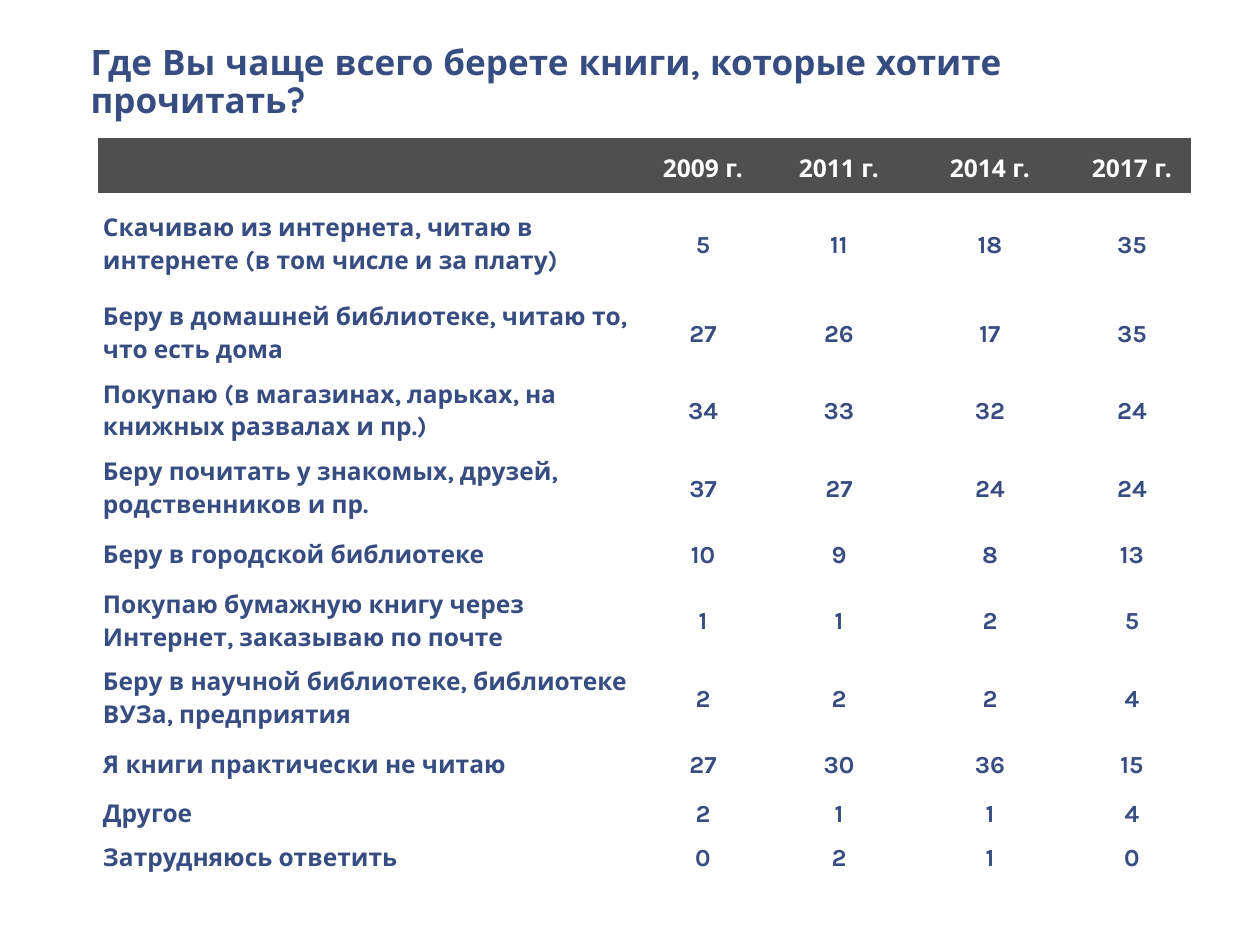
import dataclasses

import pptx
import pptx.dml.color
import pptx.enum.text
import pptx.util

RGB = pptx.dml.color.RGBColor
ALIGN = pptx.enum.text.PP_ALIGN
ANCHOR = pptx.enum.text.MSO_ANCHOR

NAVY = RGB(0x37, 0x4C, 0x81)
GREY = RGB(0x4F, 0x4F, 0x4F)
WHITE = RGB(0xFF, 0xFF, 0xFF)
PLAIN = "{2D5ABB26-0587-4C30-8999-92F81FD0307C}"
SCALE = 914400 / 126
INSET = 5


@dataclasses.dataclass(frozen=True)
class Answer:
    label: str
    shares: tuple[int, ...]
    height: int


@dataclasses.dataclass(frozen=True)
class Look:
    font: str
    ink: RGB
    fill: RGB


HEAD = Look("Open Sans", WHITE, GREY)
BODY = Look("Karla", NAVY, WHITE)
TITLE = "Где Вы чаще всего берете книги, которые хотите прочитать?"
YEARS = (2009, 2011, 2014, 2017)
WIDTHS = (537, 136, 136, 166, 118)
TOP = 55
ANSWERS = (
    Answer("Скачиваю из интернета, читаю в интернете (в том числе и за плату)", (5, 11, 18, 35), 100),
    Answer("Беру в домашней библиотеке, читаю то, что есть дома", (27, 26, 17, 35), 77),
    Answer("Покупаю (в магазинах, ларьках, на книжных развалах и пр.)", (34, 33, 32, 24), 77),
    Answer("Беру почитать у знакомых, друзей, родственников и пр.", (37, 27, 24, 24), 77),
    Answer("Беру в городской библиотеке", (10, 9, 8, 13), 55),
    Answer("Покупаю бумажную книгу через Интернет, заказываю по почте", (1, 1, 2, 5), 77),
    Answer("Беру в научной библиотеке, библиотеке ВУЗа, предприятия", (2, 2, 2, 4), 77),
    Answer("Я книги практически не читаю", (27, 30, 36, 15), 55),
    Answer("Другое", (2, 1, 1, 4), 34),
    Answer("Затрудняюсь ответить", (0, 2, 1, 0), 34),
)


def px(count: int) -> int:
    return round(count * SCALE)


def style(para, font: str, size: int, ink: RGB, align: ALIGN, space: float) -> None:
    para.alignment = align
    para.line_spacing = space
    para.font.name = font
    para.font.size = pptx.util.Pt(size)
    para.font.bold = True
    para.font.color.rgb = ink


def add_title(slide) -> None:
    title = slide.shapes.title
    title.left, title.top, title.width, title.height = map(px, (78, 39, 1142, 55))
    frame = title.text_frame
    frame.text = TITLE
    frame.word_wrap = True
    frame.auto_size = pptx.enum.text.MSO_AUTO_SIZE.SHAPE_TO_FIT_TEXT
    frame.vertical_anchor = ANCHOR.TOP
    style(frame.paragraphs[0], "Quicksand", 20, NAVY, ALIGN.LEFT, 0.9)


def fill_row(row, texts: list[str], look: Look) -> None:
    for col, (cell, text) in enumerate(zip(row.cells, texts)):
        cell.text = text
        cell.vertical_anchor = ANCHOR.MIDDLE
        cell.margin_left = cell.margin_right = px(INSET)
        cell.margin_top = cell.margin_bottom = px(INSET)
        cell.fill.solid()
        cell.fill.fore_color.rgb = look.fill
        align = ALIGN.CENTER if col else ALIGN.LEFT
        style(cell.text_frame.paragraphs[0], look.font, 14, look.ink, align, 1.15)


def add_grid(slide) -> None:
    heights = [TOP] + [answer.height for answer in ANSWERS]
    frame = slide.shapes.add_table(
        len(heights), len(WIDTHS), px(98), px(138), px(sum(WIDTHS)), px(sum(heights))
    )
    table = frame.table
    table.first_row = table.horz_banding = False
    table._tbl.tblPr[0].text = PLAIN
    for col, width in zip(table.columns, WIDTHS):
        col.width = px(width)
    for row, height in zip(table.rows, heights):
        row.height = px(height)
    fill_row(table.rows[0], [""] + [f"{year} г." for year in YEARS], HEAD)
    for index, answer in enumerate(ANSWERS, 1):
        fill_row(table.rows[index], [answer.label, *map(str, answer.shares)], BODY)


def main() -> None:
    deck = pptx.Presentation()
    deck.slide_width = pptx.util.Inches(10)
    deck.slide_height = pptx.util.Inches(7.5)
    slide = deck.slides.add_slide(deck.slide_layouts[5])
    add_title(slide)
    add_grid(slide)
    deck.save("out.pptx")


if __name__ == "__main__":
    main()
